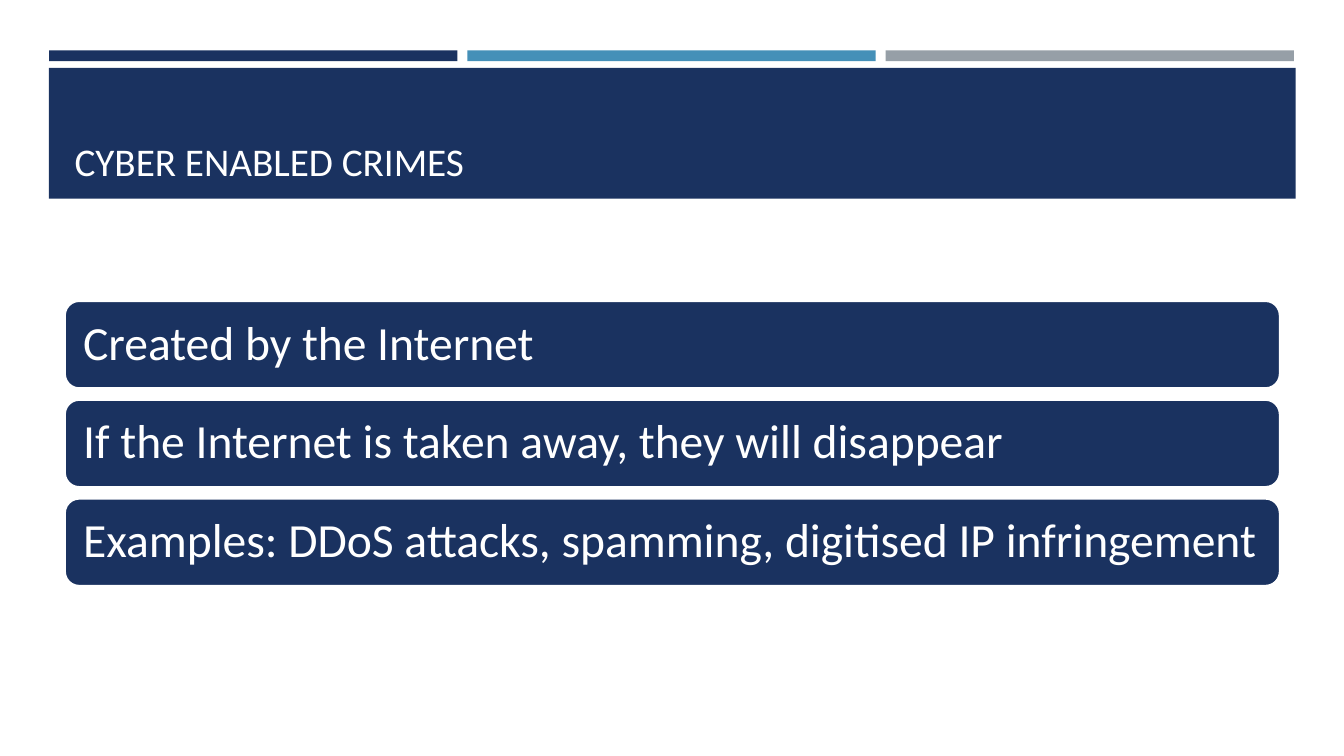
from pptx import Presentation
from pptx.dml.color import RGBColor
from pptx.enum.shapes import MSO_SHAPE
from pptx.enum.text import MSO_ANCHOR, PP_ALIGN
from pptx.util import Cm, Pt

NAVY, BLUE, GREY, WHITE = "1A3260", "4590B8", "969FA7", "FFFFFF"
STATEMENTS = [
    "Created by the Internet",
    "If the Internet is taken away, they will disappear",
    "Examples: DDoS attacks, spamming, digitised IP infringement",
]


def color(value):
    return RGBColor.from_string(value)


def apply_format(target, values):
    for name, value in values.items():
        setattr(target, name, value)


class SlideBuilder:
    font_name = "Calibri"
    text_color = WHITE

    def __init__(self, slide):
        self.slide = slide

    def fill_text(self, shape, text, size, frame_format, line_spacing=1.0):
        frame = shape.text_frame
        apply_format(frame, {"word_wrap": True, **frame_format})
        paragraph = frame.paragraphs[0]
        apply_format(paragraph, {"text": text, "alignment": PP_ALIGN.LEFT, "line_spacing": line_spacing})
        font = paragraph.runs[0].font
        apply_format(font, {"name": self.font_name, "size": Pt(size)})
        font.color.rgb = color(self.text_color)

    def block(self, left, top, width, height, fill, kind=MSO_SHAPE.RECTANGLE):
        shape = self.slide.shapes.add_shape(kind, Cm(left), Cm(top), Cm(width), Cm(height))
        shape.shadow.inherit = False
        shape.fill.solid()
        shape.fill.fore_color.rgb = color(fill)
        shape.line.fill.background()
        return shape

    def title(self, text, left, top, width, height):
        box = self.slide.shapes.add_textbox(Cm(left), Cm(top), Cm(width), Cm(height))
        self.fill_text(box, text, 28, {"vertical_anchor": MSO_ANCHOR.BOTTOM})

    def card(self, text, left, top, width, height):
        shape = self.block(left, top, width, height, NAVY, MSO_SHAPE.ROUNDED_RECTANGLE)
        shape.line.color.rgb = color(WHITE)
        shape.line.width = Pt(1.75)
        sides = ("left", "top", "right", "bottom")
        margins = {f"margin_{side}": Cm(0.36) for side in sides}
        self.fill_text(shape, text, 34, {"vertical_anchor": MSO_ANCHOR.MIDDLE, **margins}, 0.9)


def main():
    presentation = Presentation()
    apply_format(presentation, {"slide_width": Cm(33.87), "slide_height": Cm(19.05)})
    builder = SlideBuilder(presentation.slides.add_slide(presentation.slide_layouts[6]))

    for index, fill in enumerate([NAVY, BLUE, GREY]):
        builder.block(1.24 + index * 10.54, 1.27, 10.29, 0.27, fill)
    builder.block(1.23, 1.71, 31.42, 3.3, NAVY)
    builder.title("CYBER ENABLED CRIMES", 1.63, 1.96, 30.63, 2.82)
    for index, statement in enumerate(STATEMENTS):
        builder.card(statement, 1.63, 7.58 + index * 2.49, 30.63, 2.21)

    presentation.save("out.pptx")


if __name__ == "__main__":
    main()
